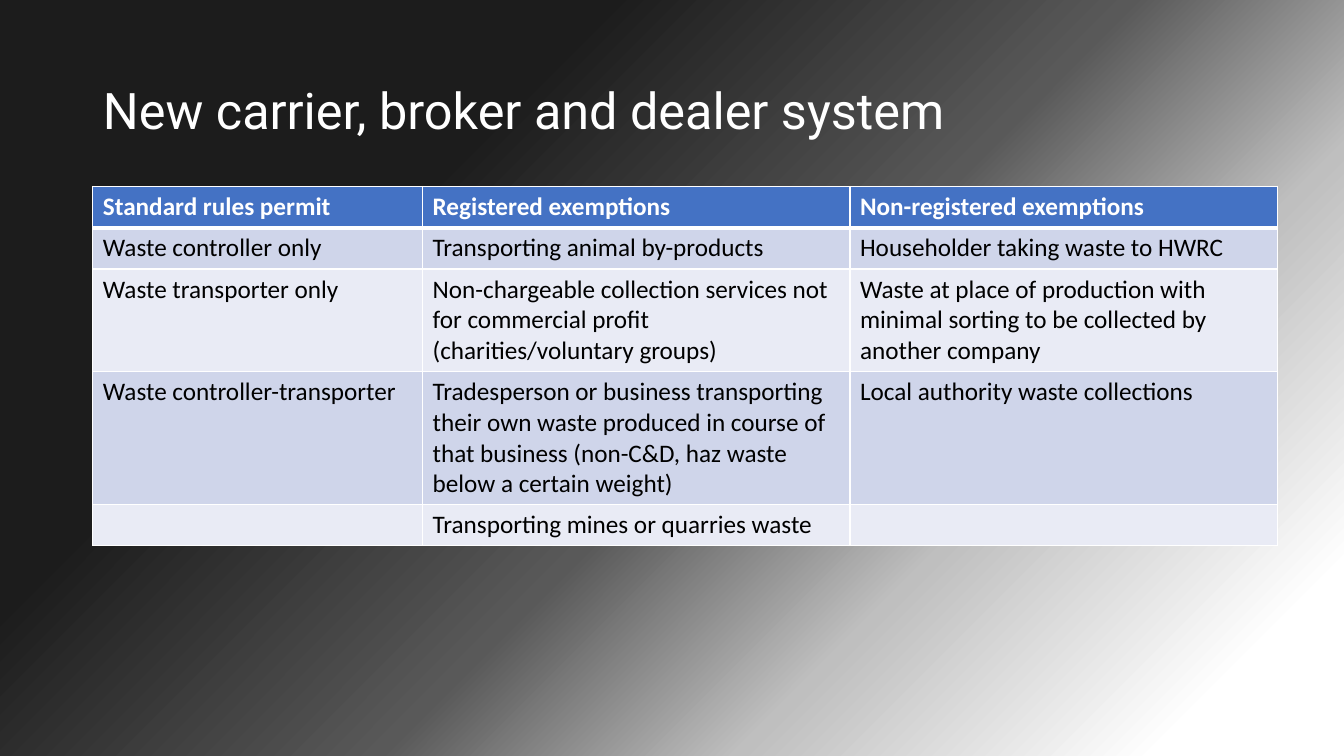
import copy
from dataclasses import dataclass

import pptx
import pptx.dml.color
import pptx.enum.text
import pptx.oxml
import pptx.oxml.ns
import pptx.slide
import pptx.table
import pptx.util

Cm = pptx.util.Cm
Pt = pptx.util.Pt
RGBColor = pptx.dml.color.RGBColor
qn = pptx.oxml.ns.qn

WHITE = RGBColor(0xFF, 0xFF, 0xFF)
BLACK = RGBColor(0x00, 0x00, 0x00)
SILVER = RGBColor(0xBF, 0xBF, 0xBF)
GREY = RGBColor(0x59, 0x59, 0x59)
CHARCOAL = RGBColor(0x1C, 0x1C, 0x1C)
HEADER_BLUE = RGBColor(0x44, 0x72, 0xC4)
BAND_DARK = RGBColor(0xCF, 0xD5, 0xEA)
BAND_LIGHT = RGBColor(0xE9, 0xEB, 0xF5)

LEFT = Cm(2.34)
ROW_HEIGHT = Cm(1.04)
COL_WIDTHS = (Cm(8.31), Cm(10.77), Cm(10.77))
TITLE_FONT = {"name": "Roboto", "size": Pt(36), "bold": False}
HEADER_FONT = {"name": "Calibri", "size": Pt(18), "bold": True}
BODY_FONT = {"name": "Calibri", "size": Pt(18), "bold": False}


@dataclass(frozen=True)
class Stop:
    position: float
    color: RGBColor


@dataclass(frozen=True)
class Row:
    texts: tuple[str, str, str]
    fill: RGBColor
    color: RGBColor = BLACK
    top: int = 1
    bottom: int = 1


STOPS = (Stop(0.09, WHITE), Stop(0.29, SILVER), Stop(0.46, GREY), Stop(0.71, CHARCOAL))

ROWS = (
    Row(("Standard rules permit", "Registered exemptions", "Non-registered exemptions"),
        HEADER_BLUE, WHITE, bottom=3),
    Row(("Waste controller only", "Transporting animal by-products",
         "Householder taking waste to HWRC"), BAND_DARK, top=3),
    Row(("Waste transporter only",
         "Non-chargeable collection services not for commercial profit "
         "(charities/voluntary groups)",
         "Waste at place of production with minimal sorting to be collected by "
         "another company"), BAND_LIGHT),
    Row(("Waste controller-transporter",
         "Tradesperson or business transporting their own waste produced in course of "
         "that business (non-C&D, haz waste below a certain weight)",
         "Local authority waste collections"), BAND_DARK),
    Row(("", "Transporting mines or quarries waste", ""), BAND_LIGHT),
)


def set_format(target: object, values: dict) -> None:
    for name, value in values.items():
        setattr(target, name, value)


def paint_background(s: pptx.slide.Slide) -> None:
    fill = s.background.fill
    fill.gradient()
    fill.gradient_angle = 135
    stop_list = s.element.find(".//" + qn("a:gsLst"))
    for _ in range(len(STOPS) - len(stop_list)):
        stop_list.append(copy.deepcopy(stop_list[0]))
    for gradient_stop, stop in zip(fill.gradient_stops, STOPS):
        gradient_stop.position = stop.position
        gradient_stop.color.rgb = stop.color


def add_title(s: pptx.slide.Slide, text: str) -> None:
    sp = s.shapes.title
    set_format(sp, {"left": LEFT, "top": Cm(1.02), "width": Cm(29.21), "height": Cm(3.68)})
    tf = sp.text_frame
    set_format(tf, {"word_wrap": True,
                    "auto_size": pptx.enum.text.MSO_AUTO_SIZE.NONE,
                    "vertical_anchor": pptx.enum.text.MSO_ANCHOR.MIDDLE})
    p = tf.paragraphs[0]
    set_format(p, {"alignment": pptx.enum.text.PP_ALIGN.LEFT, "line_spacing": 0.9})
    r = p.add_run()
    r.text = text
    set_format(r.font, TITLE_FONT)
    r.font.color.rgb = WHITE


def add_borders(cell: pptx.table._Cell, row: Row) -> None:
    tc_pr = cell._tc.get_or_add_tcPr()
    widths = {"lnL": 1, "lnR": 1, "lnT": row.top, "lnB": row.bottom}
    for tag, width in widths.items():
        tc_pr.append(pptx.oxml.parse_xml(
            f'<a:{tag} {pptx.oxml.ns.nsdecls("a")} w="{Pt(width)}">'
            f'<a:solidFill><a:srgbClr val="{WHITE}"/></a:solidFill></a:{tag}>'))


def fill_cell(cell: pptx.table._Cell, text: str, row: Row, font: dict) -> None:
    add_borders(cell, row)
    cell.fill.solid()
    cell.fill.fore_color.rgb = row.fill
    p = cell.text_frame.paragraphs[0]
    set_format(p.font, font)
    if text:
        r = p.add_run()
        r.text = text
        set_format(r.font, font)
        r.font.color.rgb = row.color


def add_permit_table(s: pptx.slide.Slide) -> None:
    table = s.shapes.add_table(len(ROWS), len(COL_WIDTHS), LEFT, Cm(4.7),
                               sum(COL_WIDTHS), ROW_HEIGHT * len(ROWS)).table
    for column, width in zip(table.columns, COL_WIDTHS):
        column.width = width
    for i, row in enumerate(ROWS):
        table.rows[i].height = ROW_HEIGHT
        font = BODY_FONT if i else HEADER_FONT
        for cell, text in zip(table.rows[i].cells, row.texts):
            fill_cell(cell, text, row, font)


def main() -> None:
    prs = pptx.Presentation()
    set_format(prs, {"slide_width": Cm(33.87), "slide_height": Cm(19.05)})
    s = prs.slides.add_slide(prs.slide_layouts[5])
    paint_background(s)
    add_title(s, "New carrier, broker and dealer system")
    add_permit_table(s)
    prs.save("out.pptx")


if __name__ == "__main__":
    main()
